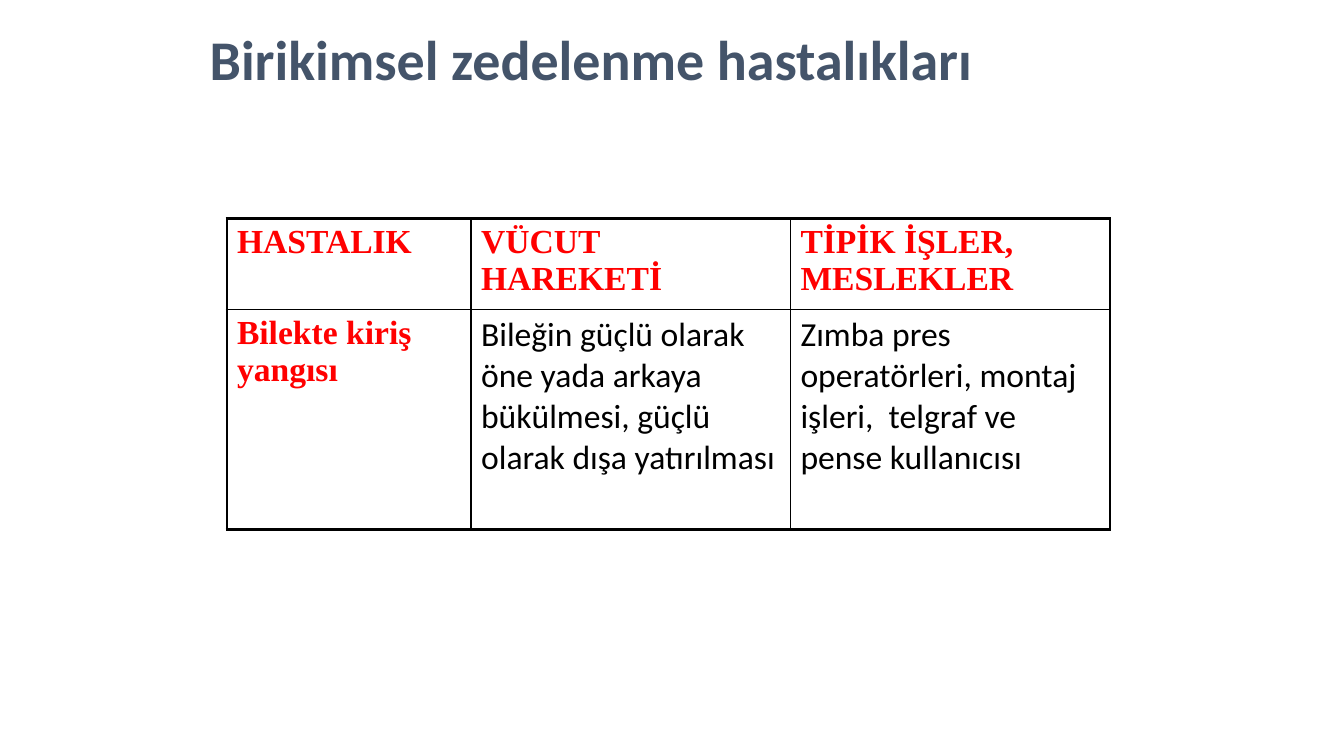
"""Builds a slide with a table of cumulative trauma disorders."""
from lxml import etree
from pptx import Presentation
from pptx.dml.color import RGBColor
from pptx.enum.text import MSO_ANCHOR, MSO_AUTO_SIZE, PP_ALIGN
from pptx.oxml.ns import qn
from pptx.util import Cm, Pt

LEFT = PP_ALIGN.LEFT
TOP, MIDDLE = MSO_ANCHOR.TOP, MSO_ANCHOR.MIDDLE
NO_FIT = MSO_AUTO_SIZE.NONE
SLATE = RGBColor(0x44, 0x54, 0x6A)
RED = RGBColor(0xFF, 0x00, 0x00)
BLACK = RGBColor(0x00, 0x00, 0x00)
OUTER, INNER = Pt(2.25), Pt(1)

TITLE = {"name": "Calibri", "size": Pt(40), "bold": True, "color": SLATE}
HEADING = {"name": "Times New Roman", "size": Pt(24), "bold": True, "color": RED}
BODY = {"name": "Calibri", "size": Pt(24), "bold": False, "color": BLACK}

ROWS = [
    ["HASTALIK", "VÜCUT HAREKETİ", "TİPİK İŞLER, MESLEKLER"],
    ["Bilekte kiriş yangısı",
     "Bileğin güçlü olarak öne yada arkaya bükülmesi, güçlü olarak dışa yatırılması",
     "Zımba pres operatörleri, montaj işleri,  telgraf ve pense kullanıcısı"],
]
COL_WIDTHS = [6.15, 8.05, 8.05]
ROW_HEIGHTS = [2.29, 5.54]


class SlideBuilder:
    """Holds the current slide and its text and border styles."""

    def __init__(self, prs):
        self.s = prs.slides.add_slide(prs.slide_layouts[5])

    def text(self, tf, text, style):
        tf.word_wrap = True
        p = tf.paragraphs[0]
        p.alignment = LEFT
        r = p.add_run()
        r.text = text
        for key, value in style.items():
            if key == "color":
                r.font.color.rgb = value
            else:
                setattr(r.font, key, value)
        return p

    def title(self, text, left, top, width, height):
        sp = self.s.shapes.title
        box = {"left": left, "top": top, "width": width, "height": height}
        for key, value in box.items():
            setattr(sp, key, Cm(value))
        tf = sp.text_frame
        tf.auto_size = NO_FIT
        tf.vertical_anchor = MIDDLE
        self.text(tf, text, TITLE).line_spacing = 0.9

    def borders(self, cell, widths):
        tcPr = cell._tc.get_or_add_tcPr()
        for side, width in widths.items():
            ln = etree.SubElement(tcPr, qn(f"a:ln{side}"), w=str(width))
            fill = etree.SubElement(ln, qn("a:solidFill"))
            etree.SubElement(fill, qn("a:srgbClr"), val=str(BLACK))

    def table(self, rows, left, top):
        last_row, last_col = len(rows) - 1, len(rows[0]) - 1
        frame = self.s.shapes.add_table(
            len(rows), len(rows[0]), Cm(left), Cm(top),
            Cm(sum(COL_WIDTHS)), Cm(sum(ROW_HEIGHTS)))
        table = frame.table
        table.first_row = table.horz_banding = False
        for col, width in zip(table.columns, COL_WIDTHS):
            col.width = Cm(width)
        for row, height in zip(table.rows, ROW_HEIGHTS):
            row.height = Cm(height)
        for i, texts in enumerate(rows):
            for j, text in enumerate(texts):
                cell = table.cell(i, j)
                cell.vertical_anchor = TOP
                self.text(cell.text_frame, text, BODY if i and j else HEADING)
                edges = {"L": j == 0, "R": j == last_col,
                         "T": i == 0, "B": i == last_row}
                self.borders(cell, {side: OUTER if outer else INNER
                                    for side, outer in edges.items()})
                cell.fill.background()


def main():
    prs = Presentation()
    prs.slide_width, prs.slide_height = Cm(33.87), Cm(19.05)
    slide = SlideBuilder(prs)
    slide.table(ROWS, 5.72, 5.51)
    slide.title("Birikimsel zedelenme hastalıkları", 5.03, 0.58, 23.62, 1.98)
    prs.save("out.pptx")


if __name__ == "__main__":
    main()
